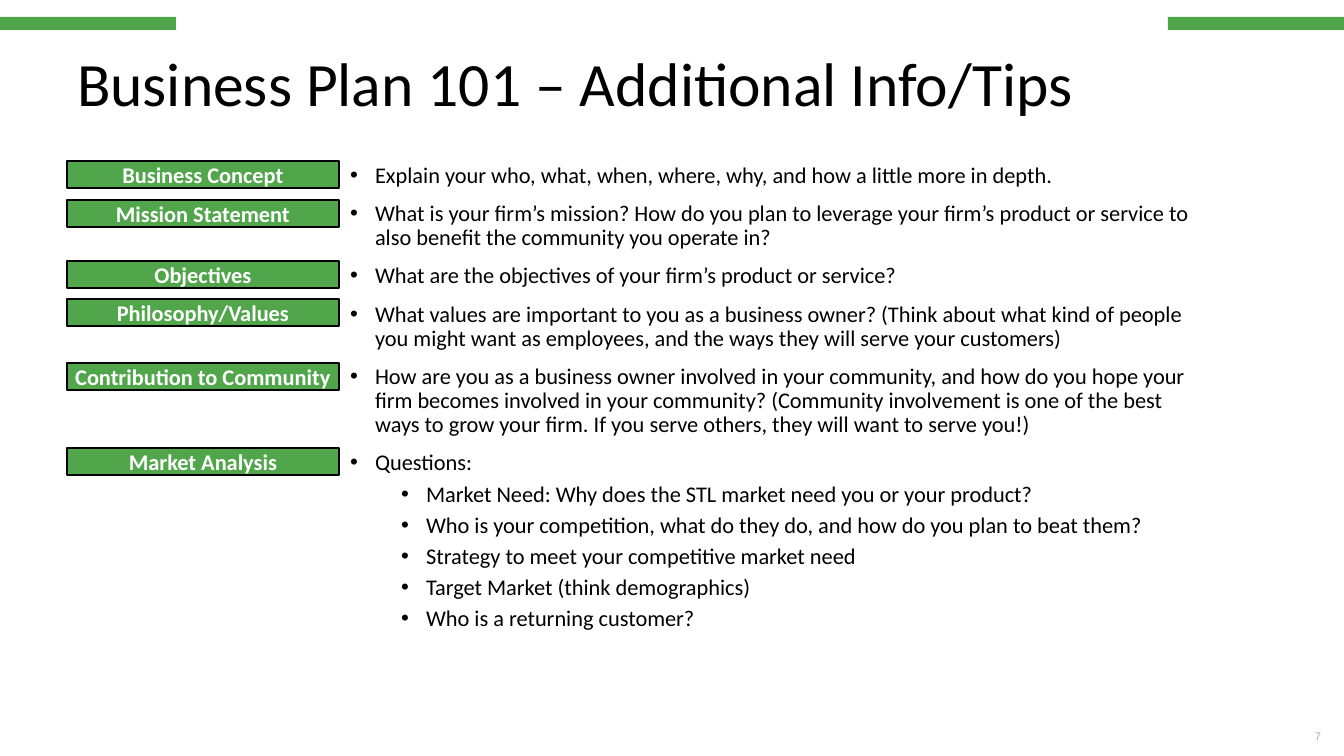
from lxml.etree import SubElement
from pptx import Presentation
from pptx.dml.color import RGBColor
from pptx.enum.shapes import MSO_SHAPE
from pptx.enum.text import MSO_ANCHOR, MSO_AUTO_SIZE, PP_ALIGN
from pptx.oxml.ns import qn
from pptx.util import Pt

PX = 9071.43  # EMU per px
GREEN = RGBColor(0x51, 0xA6, 0x4B)
BLACK = RGBColor(0, 0, 0)
WHITE = RGBColor(255, 255, 255)
GRAY = RGBColor(0xAF, 0xB0, 0xB4)

SECTIONS = [  # label top, label, tip
    (161, "Business Concept",
     "Explain your who, what, when, where, why, and how a little more in depth."),
    (200, "Mission Statement",
     "What is your firm’s mission? How do you plan to leverage your firm’s product "
     "or service to also benefit the community you operate in?"),
    (261, "Objectives",
     "What are the objectives of your firm’s product or service?"),
    (299, "Philosophy/Values",
     "What values are important to you as a business owner? (Think about what kind of "
     "people you might want as employees, and the ways they will serve your customers)"),
    (363, "Contribution to Community",
     "How are you as a business owner involved in your community, and how do you hope "
     "your firm becomes involved in your community? (Community involvement is one of the "
     "best ways to grow your firm. If you serve others, they will want to serve you!)"),
    (448, "Market Analysis", "Questions:"),
]
QUESTIONS = [
    "Market Need: Why does the STL market need you or your product?",
    "Who is your competition, what do they do, and how do you plan to beat them?",
    "Strategy to meet your competitive market need",
    "Target Market (think demographics)",
    "Who is a returning customer?",
]


def emu(*lengths):
    return [round(length * PX) for length in lengths]


def style(paragraph, size, color, alignment, font="Calibri", bold=False):
    paragraph.alignment = alignment
    paragraph.font.name = font
    paragraph.font.size = Pt(size)
    paragraph.font.bold = bold
    paragraph.font.color.rgb = color


presentation = Presentation()
presentation.slide_width, presentation.slide_height = emu(1344, 756)
slide = presentation.slides.add_slide(presentation.slide_layouts[1])

# Title
title = slide.shapes.title
title.left, title.top, title.width, title.height = emu(67, 50, 1210, 73)
title.text_frame.auto_size = MSO_AUTO_SIZE.NONE
title.text_frame.vertical_anchor = MSO_ANCHOR.MIDDLE
title.text_frame.text = "Business Plan 101 – Additional Info/Tips"
title.text_frame.paragraphs[0].line_spacing = 0.9
style(title.text_frame.paragraphs[0], 44, BLACK, PP_ALIGN.LEFT)

# Tips and questions
body = slide.placeholders[1]
body.left, body.top, body.width, body.height = emu(340, 159, 864, 534)
frame = body.text_frame
frame.auto_size = MSO_AUTO_SIZE.NONE
items = [(tip, 0) for _, _, tip in SECTIONS] + [(question, 1) for question in QUESTIONS]
for index, (text, level) in enumerate(items):
    paragraph = frame.add_paragraph() if index else frame.paragraphs[0]
    paragraph.text = text
    paragraph.level = level
    paragraph.line_spacing = 0.9
    paragraph.space_before = Pt(5 if level else 10)
    style(paragraph, 16, BLACK, PP_ALIGN.LEFT)
    properties = paragraph._p.get_or_add_pPr()
    margin, indent = emu(76 if level else 25, -25)
    properties.set("marL", str(margin))
    properties.set("indent", str(indent))
    bullet_font = SubElement(properties, qn("a:buFont"), typeface="Arial")
    bullet = SubElement(properties, qn("a:buChar"), char="•")
    run_defaults = properties.find(qn("a:defRPr"))
    run_defaults.addprevious(bullet_font)
    run_defaults.addprevious(bullet)

# Section labels
for top, text, _ in SECTIONS:
    label = slide.shapes.add_shape(MSO_SHAPE.RECTANGLE, *emu(67, top, 272, 27))
    label.shadow.inherit = False
    label.fill.solid()
    label.fill.fore_color.rgb = GREEN
    label.line.color.rgb = BLACK
    label.line.width = Pt(1)
    frame = label.text_frame
    frame.margin_left = frame.margin_right = frame.margin_top = frame.margin_bottom = 0
    frame.vertical_anchor = MSO_ANCHOR.MIDDLE
    frame.text = text
    style(frame.paragraphs[0], 16, WHITE, PP_ALIGN.CENTER, bold=True)

# Slide number
number = slide.shapes.add_textbox(*emu(1281, 724, 50, 22))
number.text_frame.word_wrap = True
number.text_frame.text = "7"
style(number.text_frame.paragraphs[0], 8, GRAY, PP_ALIGN.RIGHT, font="Arial")

# Corner bars
for left in (0, 1344 - 176):
    bar = slide.shapes.add_shape(MSO_SHAPE.RECTANGLE, *emu(left, 17, 176, 13))
    bar.shadow.inherit = False
    bar.fill.solid()
    bar.fill.fore_color.rgb = GREEN
    bar.line.fill.background()

presentation.save("out.pptx")
